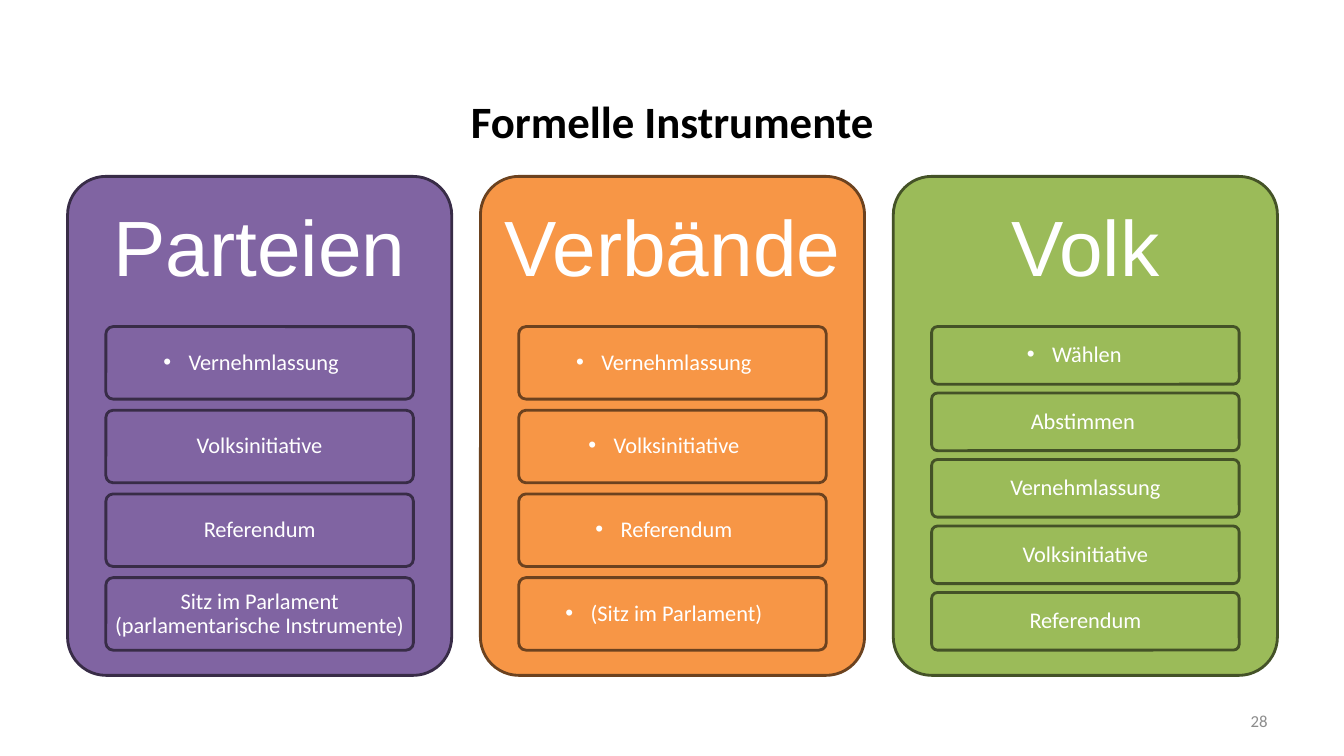
from dataclasses import dataclass

from lxml.etree import SubElement
from pptx import Presentation
from pptx.dml.color import RGBColor
from pptx.enum.shapes import MSO_SHAPE as Shape
from pptx.enum.text import MSO_ANCHOR as Anchor, PP_ALIGN as Align
from pptx.oxml.ns import qn
from pptx.util import Inches, Pt


@dataclass(frozen=True)
class Theme:
    black: str = "000000"
    white: str = "FFFFFF"
    gray: str = "8C8C8C"
    purple: tuple = ("8064A2", "382C47")
    orange: tuple = ("F79646", "6C421F")
    green: tuple = ("9BBB59", "445227")
    body: str = "Calibri"
    display: str = "Arial"
    title: int = 32
    head: int = 56
    item: int = 16
    page: int = 12
    line: int = 2


THEME = Theme()
LEFT, TOP, WIDTH, HEIGHT, STEP = 0.67, 1.75, 3.81, 4.95, 4.095
HEAD = 1.48
INSET, FIRST, STACK, RATIO = 0.38, 3.24, 3.21, 0.154

# heading, (fill, line), items, number of leading items with a bullet
CARDS = [
    ("Parteien", THEME.purple,
     ["Vernehmlassung", "Volksinitiative", "Referendum",
      "Sitz im Parlament (parlamentarische Instrumente)"], 1),
    ("Verbände", THEME.orange,
     ["Vernehmlassung", "Volksinitiative", "Referendum",
      "(Sitz im Parlament)"], 4),
    ("Volk", THEME.green,
     ["Wählen ", "Abstimmen ", "Vernehmlassung", "Volksinitiative",
      "Referendum"], 1),
]


def write(frame, text, size, color, font=THEME.body, align=Align.CENTER,
          bold=False, inset=(0.1, 0.05), spacing=None):
    """Fill a text frame with one paragraph and return it."""
    side, edge = map(Inches, inset)
    style = {"word_wrap": True, "vertical_anchor": Anchor.MIDDLE,
             "margin_left": side, "margin_right": side,
             "margin_top": edge, "margin_bottom": edge}
    for name, value in style.items():
        setattr(frame, name, value)
    para = frame.paragraphs[0]
    para.alignment = align
    if spacing:
        para.line_spacing = spacing
    run = para.add_run()
    run.text = text
    for name, value in {"name": font, "size": Pt(size), "bold": bold}.items():
        setattr(run.font, name, value)
    run.font.color.rgb = RGBColor.from_string(color)
    return para


def add_label(slide, box, text, size, color, **style):
    label = slide.shapes.add_textbox(*map(Inches, box))
    write(label.text_frame, text, size, color, **style)


def add_panel(slide, box, colors):
    panel = slide.shapes.add_shape(Shape.ROUNDED_RECTANGLE, *map(Inches, box))
    panel.adjustments[0] = 0.1
    panel.shadow.inherit = False
    fill, line = map(RGBColor.from_string, colors)
    panel.fill.solid()
    panel.fill.fore_color.rgb = fill
    panel.line.color.rgb = line
    panel.line.width = Pt(THEME.line)
    return panel


def add_bullet(para):
    props = para._p.get_or_add_pPr()
    props.set("marL", str(Inches(0.08)))
    props.set("indent", str(-Inches(0.25)))
    SubElement(props, qn("a:buFont"), typeface=THEME.display)
    SubElement(props, qn("a:buChar"), char="•")


def add_card(slide, left, heading, colors, items, bullets):
    add_panel(slide, (left, TOP, WIDTH, HEIGHT), colors)
    add_label(slide, (left, TOP, WIDTH, HEAD), heading, THEME.head,
              THEME.white, font=THEME.display, inset=(0.23, 0.23), spacing=0.9)
    count = len(items)
    height = STACK / (count + (count - 1) * RATIO)
    for row, item in enumerate(items):
        top = FIRST + row * height * (1 + RATIO)
        panel = add_panel(
            slide, (left + INSET, top, WIDTH - 2 * INSET, height), colors)
        para = write(panel.text_frame, item, THEME.item, THEME.white,
                     inset=(0.04, 0.03), spacing=0.9)
        if row < bullets:
            add_bullet(para)


def add_title(slide, text):
    title = slide.shapes.title
    box = {"left": LEFT, "top": 0.84, "width": 12, "height": 0.71}
    for name, value in box.items():
        setattr(title, name, Inches(value))
    write(title.text_frame, text, THEME.title, THEME.black, bold=True)


def main():
    deck = Presentation()
    deck.slide_width, deck.slide_height = Inches(13.33), Inches(7.5)
    slide = deck.slides.add_slide(deck.slide_layouts[5])
    add_title(slide, "Formelle Instrumente")
    for col, card in enumerate(CARDS):
        add_card(slide, LEFT + col * STEP, *card)
    add_label(slide, (9.56, 6.95, 3.11, 0.4), "28", THEME.page, THEME.gray,
              align=Align.RIGHT)
    deck.save("out.pptx")


if __name__ == "__main__":
    main()
